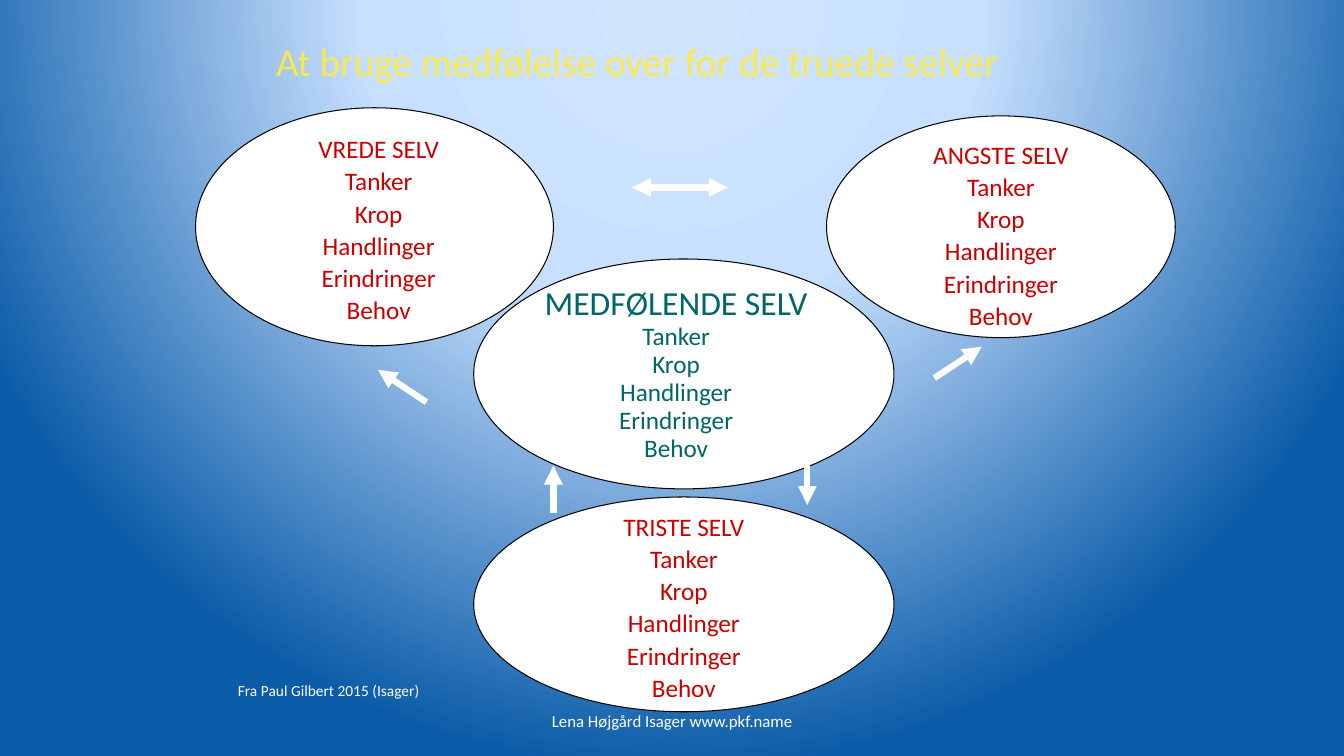
"""Build the slide on meeting the threatened selves with compassion."""
from lxml.etree import SubElement, fromstring
from pptx import Presentation
from pptx.dml.color import RGBColor
from pptx.enum.shapes import MSO_CONNECTOR as Connector, MSO_SHAPE as Shape
from pptx.enum.text import MSO_ANCHOR as Anchor, PP_ALIGN as Align
from pptx.oxml.ns import nsdecls, qn
from pptx.util import Pt

WHITE, BLACK, RED, GREEN, YELLOW = "FFFFFF", "000000", "CC0000", "006666", "F8E950"
ASPECTS = ["Tanker", "Krop", "Handlinger", "Erindringer", "Behov"]


def color(value):
    return RGBColor.from_string(value)


def write(holder, lines, sizes, hue, frame_format, paragraph_format):
    frame = holder.text_frame
    for key, value in frame_format.items():
        setattr(frame, key, value)
    frame.text = "\n".join(lines)
    for paragraph, size in zip(frame.paragraphs, sizes):
        for key, value in paragraph_format.items():
            setattr(paragraph, key, value)
        for run in paragraph.runs:
            for key, value in {"name": "Calibri", "size": Pt(size), "bold": False}.items():
                setattr(run.font, key, value)
            run.font.color.rgb = color(hue)


deck = Presentation()
deck.slide_width, deck.slide_height = Pt(960), Pt(540)
slide = deck.slides.add_slide(deck.slide_layouts[5])

stops = "".join(
    f'<a:gs pos="{position * 1000}"><a:srgbClr val="{hue}"/></a:gs>'
    for position, hue in [(0, "D1E5FF"), (40, "C8E0FF"), (100, "0B5CA8")]
)
slide.background.fill.solid()
background = slide.background.fill._xPr
background.replace(background.find(qn("a:solidFill")), fromstring(
    f'<a:gradFill {nsdecls("a")} rotWithShape="1"><a:gsLst>{stops}</a:gsLst><a:path path="circle">'
    '<a:fillToRect l="50000" t="-80000" r="50000" b="180000"/></a:path></a:gradFill>'))

selves = [
    ("VREDE SELV", (139.7, 77, 255.6, 170), RED, 18, 23, (6, 0, 2, 0)),
    ("ANGSTE SELV", (590.4, 82.8, 249.1, 158.4), RED, 18, 23, (0, 0, 10, 0)),
    ("TRISTE SELV", (338.4, 355, 300.2, 153.4), RED, 18, 23, (0, 0, 2, 0)),
    ("MEDFØLENDE SELV", (338.4, 185, 300.2, 164.2), GREEN, 24, 20, (0, 11, 6, 0)),
]
for name, place, hue, heading_size, pitch, (left, right, top, bottom) in selves:
    oval = slide.shapes.add_shape(Shape.OVAL, *map(Pt, place))
    oval.shadow.inherit = False
    oval.fill.solid()
    oval.fill.fore_color.rgb = color(WHITE)
    oval.line.color.rgb = color(BLACK)
    oval.line.width = Pt(0.75)
    write(oval, [name, *ASPECTS], [heading_size] + [18] * len(ASPECTS), hue,
          {"word_wrap": False, "vertical_anchor": Anchor.MIDDLE,
           "margin_left": Pt(left), "margin_right": Pt(right),
           "margin_top": Pt(top), "margin_bottom": Pt(bottom)},
          {"alignment": Align.CENTER, "line_spacing": Pt(pitch)})

arrows = [
    ((576.7, 326.9, 576.7, 360.7), ["tailEnd"]),
    ((395.3, 366.5, 395.3, 332.6), ["tailEnd"]),
    ((304.6, 287.3, 270, 264.2), ["tailEnd"]),
    ((667.4, 270, 701.3, 247.7), ["tailEnd"]),
    ((451.4, 133.9, 519.8, 133.9), ["headEnd", "tailEnd"]),
]
for ends, heads in arrows:
    arrow = slide.shapes.add_connector(Connector.STRAIGHT, *map(Pt, ends))
    arrow.line.color.rgb = color(WHITE)
    arrow.line.width = Pt(4.5)
    for head in heads:
        SubElement(arrow.line._ln, qn(f"a:{head}"), type="triangle")
    SubElement(arrow._element.spPr, qn("a:effectLst"))

heading = slide.shapes.title
heading.left, heading.top, heading.width, heading.height = map(Pt, (190, 23, 562.3, 41))
write(heading, ["At bruge medfølelse over for de truede selver"], [28], YELLOW,
      {"word_wrap": True, "vertical_anchor": Anchor.TOP}, {"alignment": Align.LEFT})

credits = [
    ("Lena Højgård Isager www.pkf.name", (328.3, 500.4, 303.8, 28.8), 12, Align.CENTER, {}),
    ("Fra Paul Gilbert 2015 (Isager)", (167, 486, 140, 13.7), 11, Align.LEFT,
     {"margin_left": Pt(2.9), "margin_right": 0, "margin_top": 0, "margin_bottom": 0}),
]
for words, place, size, alignment, margins in credits:
    credit = slide.shapes.add_textbox(*map(Pt, place))
    write(credit, [words], [size], WHITE,
          {"word_wrap": True, "vertical_anchor": Anchor.MIDDLE, **margins},
          {"alignment": alignment})

deck.save("out.pptx")
